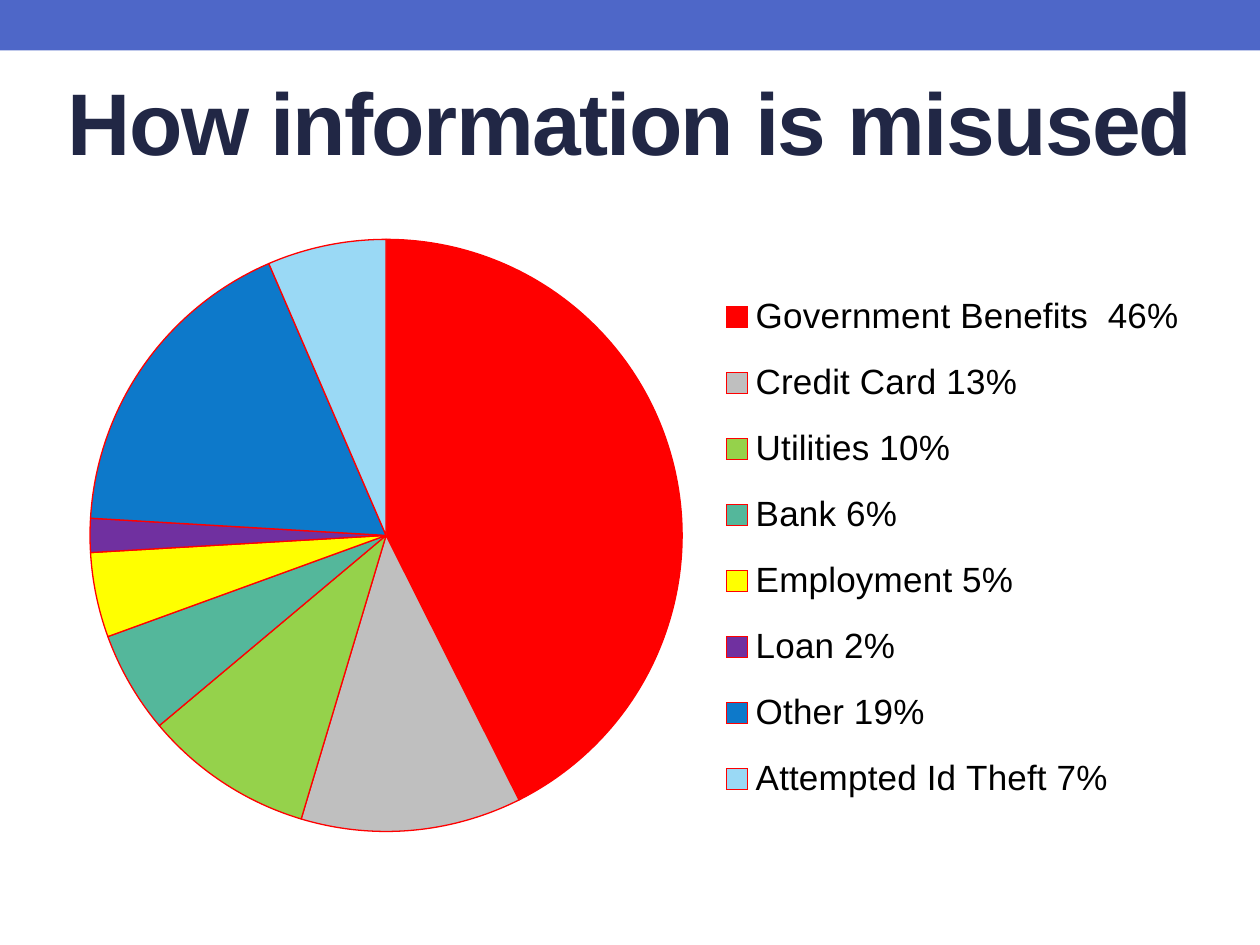
from dataclasses import dataclass

from lxml.etree import SubElement
from pptx import Presentation
from pptx.chart.data import CategoryChartData
from pptx.dml.color import RGBColor
from pptx.enum.chart import XL_CHART_TYPE, XL_LEGEND_POSITION
from pptx.enum.shapes import MSO_SHAPE
from pptx.enum.text import MSO_ANCHOR, MSO_AUTO_SIZE, PP_ALIGN
from pptx.oxml import parse_xml
from pptx.oxml.ns import nsdecls, qn
from pptx.util import Pt


@dataclass(frozen=True)
class Theme:
    font: str = "Arial"
    title_size: int = 50
    chart_size: int = 18
    legend_size: int = 20
    bar: str = "4E67C8"
    title: str = "212745"
    text: str = "000000"
    outline: str = "FF0000"


THEME = Theme()
PAGE_WIDTH, PAGE_HEIGHT = 720, 540

MISUSES = [
    ("Government Benefits  46%", 46, "FF0000"),
    ("Credit Card 13%", 13, "BFBFBF"),
    ("Utilities 10%", 10, "95D24B"),
    ("Bank 6%", 6, "54B79B"),
    ("Employment 5%", 5, "FFFF00"),
    ("Loan 2%", 2, "7030A0"),
    ("Other 19%", 19, "0D79CA"),
    ("Attempted Id Theft 7%", 7, "9AD9F5"),
]


def apply_format(target, values):
    for name, value in values.items():
        setattr(target, name, value)


def format_font(font, size, color, bold=False):
    apply_format(font, {"name": THEME.font, "size": Pt(size), "bold": bold})
    font.color.rgb = RGBColor.from_string(color)


def fill_solid(fill, color):
    fill.solid()
    fill.fore_color.rgb = RGBColor.from_string(color)


def add_bar(page, left, top, width, height):
    box = page.shapes.add_shape(
        MSO_SHAPE.RECTANGLE, Pt(left), Pt(top), Pt(width), Pt(height)
    )
    box.shadow.inherit = False
    fill_solid(box.fill, THEME.bar)
    box.line.fill.background()


def set_title(page, text, left, top, width, height):
    box = page.shapes.title
    apply_format(box, {"left": Pt(left), "top": Pt(top),
                       "width": Pt(width), "height": Pt(height)})
    apply_format(box.text_frame, {"word_wrap": True,
                                  "auto_size": MSO_AUTO_SIZE.NONE,
                                  "vertical_anchor": MSO_ANCHOR.MIDDLE})
    para = box.text_frame.paragraphs[0]
    para.alignment = PP_ALIGN.CENTER
    span = para.add_run()
    span.text = text
    format_font(span.font, THEME.title_size, THEME.title, bold=True)
    span.font._element.set("spc", "-100")


def make_layout(left, top, width, height, inner=False):
    layout = parse_xml(f"<c:layout {nsdecls('c')}/>")
    manual = SubElement(layout, qn("c:manualLayout"))
    settings = {"layoutTarget": "inner"} if inner else {}
    settings |= {"xMode": "edge", "yMode": "edge",
                 "x": left, "y": top, "w": width, "h": height}
    for name, value in settings.items():
        SubElement(manual, qn(f"c:{name}")).set("val", str(value))
    return layout


def place_plot(chart, layout):
    area = chart._chartSpace.chart.plotArea
    for old in area.findall(qn("c:layout")):
        area.remove(old)
    area.insert(0, layout)


def place_legend(chart, layout):
    legend = chart.legend._element
    for old in legend.findall(qn("c:layout")):
        legend.remove(old)
    legend.find(qn("c:legendPos")).addnext(layout)


def add_pie(page, rows, left, top, width, height):
    data = CategoryChartData()
    data.categories = [label for label, _, _ in rows]
    data.add_series("Series 1", [value for _, value, _ in rows])
    chart = page.shapes.add_chart(
        XL_CHART_TYPE.PIE, Pt(left), Pt(top), Pt(width), Pt(height), data
    ).chart
    apply_format(chart, {"has_title": False, "has_legend": True})
    format_font(chart.font, THEME.chart_size, THEME.text)
    apply_format(chart.legend, {"position": XL_LEGEND_POSITION.RIGHT,
                                "include_in_layout": False})
    format_font(chart.legend.font, THEME.legend_size, THEME.text)
    plot = chart.plots[0]
    plot.vary_by_categories = True
    for index, (_, _, color) in enumerate(rows):
        wedge = plot.series[0].points[index].format
        fill_solid(wedge.fill, color)
        wedge.line.color.rgb = RGBColor.from_string(THEME.outline)
        wedge.line.width = Pt(0.75)
    place_plot(chart, make_layout(0.02, 0.03, 0.53, 0.94, inner=True))
    place_legend(chart, make_layout(0.58, 0.08, 0.41, 0.88))


def main():
    deck = Presentation()
    apply_format(deck, {"slide_width": Pt(PAGE_WIDTH),
                        "slide_height": Pt(PAGE_HEIGHT)})
    page = deck.slides.add_slide(deck.slide_layouts[5])
    add_bar(page, 0, 0, PAGE_WIDTH, 28.8)
    set_title(page, "How information is misused", 6, 30, 708, 78)
    add_pie(page, MISUSES, 36, 126, 648, 360)
    deck.save("out.pptx")


if __name__ == "__main__":
    main()
